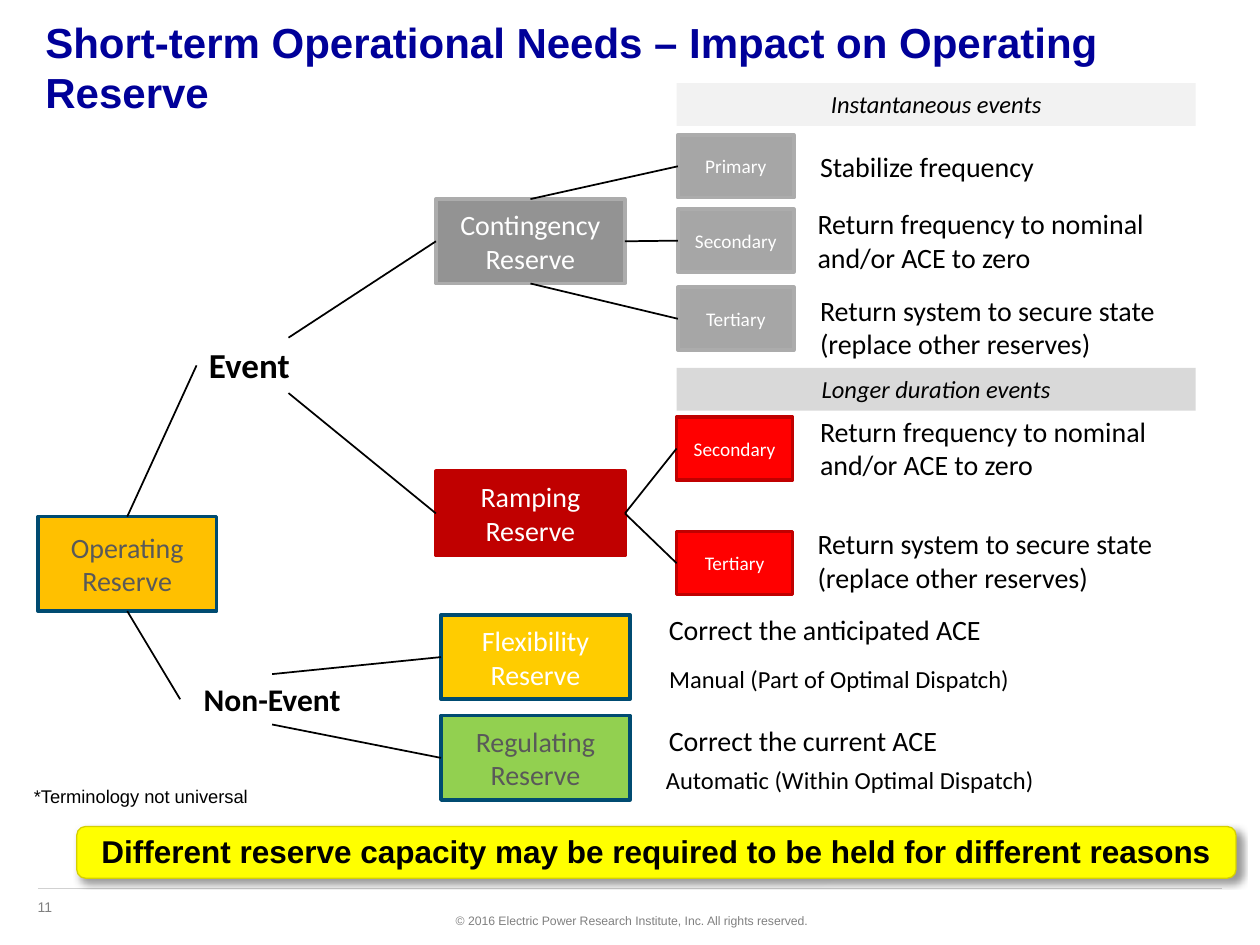
from lxml.etree import SubElement
from pptx import Presentation
from pptx.dml.color import RGBColor
from pptx.enum.shapes import MSO_CONNECTOR, MSO_SHAPE
from pptx.enum.text import MSO_ANCHOR, MSO_AUTO_SIZE, PP_ALIGN
from pptx.oxml.ns import qn
from pptx.util import Emu, Pt

PX = 9144  # 100 px to the inch
COLORS = {
    "white": "FFFFFF", "black": "000000", "navy": "000099", "grey": "808080",
    "rule": "D1D1D1", "light band": "F2F2F2", "dark band": "D9D9D9",
    "text grey": "595959", "blue": "004B71", "orange": "FFC000",
    "gold": "FFCC00", "green": "92D050", "steel": "939393",
    "steel edge": "ACACAC", "silver": "A6A6A6", "dark red": "C00000",
    "red": "FF0000", "yellow": "FFFF00", "olive": "D5D000",
}
TOP, LEFT, BOTTOM, RIGHT = range(4)  # connection sites of a rectangle


def px(*lengths):
    return [Emu(length * PX) for length in lengths]


def rgb(color):
    return RGBColor.from_string(COLORS[color])


def write(shape, text, size, color="black", font="Calibri", align=PP_ALIGN.LEFT,
          anchor=MSO_ANCHOR.TOP, bold=False, italic=False, wrap=True):
    frame = shape.text_frame
    frame.word_wrap = wrap
    frame.auto_size = MSO_AUTO_SIZE.NONE
    frame.vertical_anchor = anchor
    paragraph = frame.paragraphs[0]
    paragraph.alignment = align
    run = paragraph.add_run()
    run.text = text
    run.font.name, run.font.size = font, Pt(size)
    run.font.bold, run.font.italic = bold, italic
    run.font.color.rgb = rgb(color)
    return paragraph


def add_label(slide, box, text, size, **style):
    write(slide.shapes.add_textbox(*px(*box)), text, size, **style)


def add_box(slide, box, fill, edge=None, weight=2, kind=MSO_SHAPE.RECTANGLE):
    shape = slide.shapes.add_shape(kind, *px(*box))
    shape.shadow.inherit = False
    shape.fill.solid()
    shape.fill.fore_color.rgb = rgb(fill)
    if edge:
        shape.line.color.rgb = rgb(edge)
        shape.line.width = Pt(weight)
    else:
        shape.line.fill.background()
    return shape


def add_line(slide, ends, color="black", weight=1):
    line = slide.shapes.add_connector(MSO_CONNECTOR.STRAIGHT, *px(*ends))
    line.line.color.rgb = rgb(color)
    line.line.width = Pt(weight)
    SubElement(line._element.spPr, qn("a:effectLst"))
    return line


def add_title(slide, box):
    title = slide.shapes.title
    title.left, title.top, title.width, title.height = px(*box)
    write(title, "Short-term Operational Needs – Impact on Operating Reserve",
          24, "navy", "Arial", bold=True)


def add_reserve_tree(slide, left, top):
    sizes = {"root": (142, 75), "reserve": (150, 67), "stage": (92, 50)}
    # key: level, x, y, text, fill, edge, text colour
    nodes = {
        "operating": ("root", 0, 303, "Operating Reserve", "orange", "blue", "text grey"),
        "contingency": ("reserve", 316, 51, "Contingency Reserve", "steel", "steel edge", "white"),
        "ramping": ("reserve", 316, 267, "Ramping Reserve", "dark red", "dark red", "white"),
        "flexibility": ("reserve", 320, 381, "Flexibility Reserve", "gold", "blue", "white"),
        "regulating": ("reserve", 320, 461, "Regulating Reserve", "green", "blue", "text grey"),
        "primary": ("stage", 508, 0, "Primary", "silver", "steel edge", "white"),
        "secondary": ("stage", 508, 59, "Secondary", "silver", "steel edge", "white"),
        "tertiary": ("stage", 508, 121, "Tertiary", "silver", "steel edge", "white"),
        "ramp secondary": ("stage", 507, 224, "Secondary", "red", "dark red", "white"),
        "ramp tertiary": ("stage", 507, 315, "Tertiary", "red", "dark red", "white"),
    }
    placed = {}
    for key, (level, x, y, text, fill, edge, color) in nodes.items():
        placed[key] = add_box(slide, (left + x, top + y, *sizes[level]), fill, edge)
        write(placed[key], text, 11 if level == "stage" else 16, color,
              align=PP_ALIGN.CENTER, anchor=MSO_ANCHOR.MIDDLE)

    # Unboxed branch names
    placed["event"] = add_box(slide, (left + 126, top + 161, 146, 44), "white")
    write(placed["event"], "Event", 20, bold=True)
    placed["non-event"] = add_box(slide, (left + 113, top + 428, 146, 40), "white")
    write(placed["non-event"], "Non-Event", 18, align=PP_ALIGN.CENTER, bold=True)

    # Branches, each entering its child from the left
    branches = [
        ("operating", TOP, "event"), ("operating", BOTTOM, "non-event"),
        ("event", TOP, "contingency"), ("event", BOTTOM, "ramping"),
        ("non-event", TOP, "flexibility"), ("non-event", BOTTOM, "regulating"),
        ("contingency", TOP, "primary"), ("contingency", RIGHT, "secondary"),
        ("contingency", BOTTOM, "tertiary"),
        ("ramping", RIGHT, "ramp secondary"), ("ramping", RIGHT, "ramp tertiary"),
    ]
    for parent, side, child in branches:
        branch = add_line(slide, (0, 0, 0, 0))
        branch.begin_connect(placed[parent], side)
        branch.end_connect(placed[child], LEFT)


def add_outcomes(slide, left, top):
    # Section bands
    for y, text, fill in [(0, "Instantaneous events", "light band"),
                          (226, "Longer duration events", "dark band")]:
        band = add_box(slide, (left + 26, top + y, 412, 34), fill)
        write(band, text, 14, align=PP_ALIGN.CENTER, italic=True)

    # Purpose of each reserve
    frequency = "Return frequency to nominal and/or ACE to zero"
    secure = "Return system to secure state (replace other reserves)"
    purposes = [
        (130, 48, 195, 37, "Stabilize frequency"),
        (128, 93, 292, 64, frequency), (130, 162, 308, 64, secure),
        (130, 258, 292, 64, frequency), (128, 347, 301, 64, secure),
        (10, 415, 275, 37, "Correct the anticipated ACE"),
        (10, 503, 258, 37, "Correct the current ACE"),
    ]
    for x, y, width, height, text in purposes:
        add_label(slide, (left + x, top + y, width, height), text, 16)

    # How the non-event reserves are dispatched
    for x, y, width, text in [(-64, 456, 438, "Manual (Part of Optimal Dispatch)"),
                              (0, 536, 327, "Automatic (Within Optimal Dispatch)")]:
        add_label(slide, (left + x, top + y, width, 34), text, 14,
                  align=PP_ALIGN.CENTER)


def add_footnote(slide, box):
    note = add_box(slide, box, "white")
    paragraph = write(note, "*Terminology not universal", 10.5, font="Arial",
                      anchor=MSO_ANCHOR.MIDDLE)
    hang = 24 * PX
    properties = paragraph._p.get_or_add_pPr()
    properties.set("marL", str(hang))
    properties.set("indent", str(-hang))


def add_takeaway(slide, box):
    banner = add_box(slide, box, "yellow", "olive", 0.75, MSO_SHAPE.ROUNDED_RECTANGLE)
    paragraph = write(
        banner,
        "Different reserve capacity may be required to be held for different reasons",
        18, font="Arial", align=PP_ALIGN.CENTER, anchor=MSO_ANCHOR.MIDDLE,
        bold=True, wrap=False)
    paragraph.line_spacing = 0.95
    effects = banner._element.spPr.find(qn("a:effectLst"))
    shadow = SubElement(effects, qn("a:outerShdw"), blurRad=str(Pt(4)),
                        dist=str(Pt(3)), dir="2700000", algn="tl", rotWithShape="0")
    tint = SubElement(shadow, qn("a:srgbClr"), val=COLORS["black"])
    SubElement(tint, qn("a:alpha"), val="40000")


def add_footer(slide, left, top):
    add_line(slide, (left, top, left + 940, top), "rule", 0.75)
    add_label(slide, (left - 10, top + 3, 66, 24), "11", 8, color="grey", font="Arial")
    add_label(slide, (left + 319, top + 15, 302, 22),
              "© 2016 Electric Power Research Institute, Inc. All rights reserved.",
              7, color="grey", font="Arial", align=PP_ALIGN.RIGHT, wrap=False)


def main():
    deck = Presentation()
    deck.slide_width, deck.slide_height = px(1000, 750)
    slide = deck.slides.add_slide(deck.slide_layouts[5])
    add_footer(slide, 30, 705)
    add_title(slide, (26, 8, 940, 80))
    add_footnote(slide, (17, 602, 252, 59))
    add_reserve_tree(slide, 30, 107)
    add_outcomes(slide, 511, 66)
    add_takeaway(slide, (61, 656, 920, 41))
    deck.save("out.pptx")


if __name__ == "__main__":
    main()
